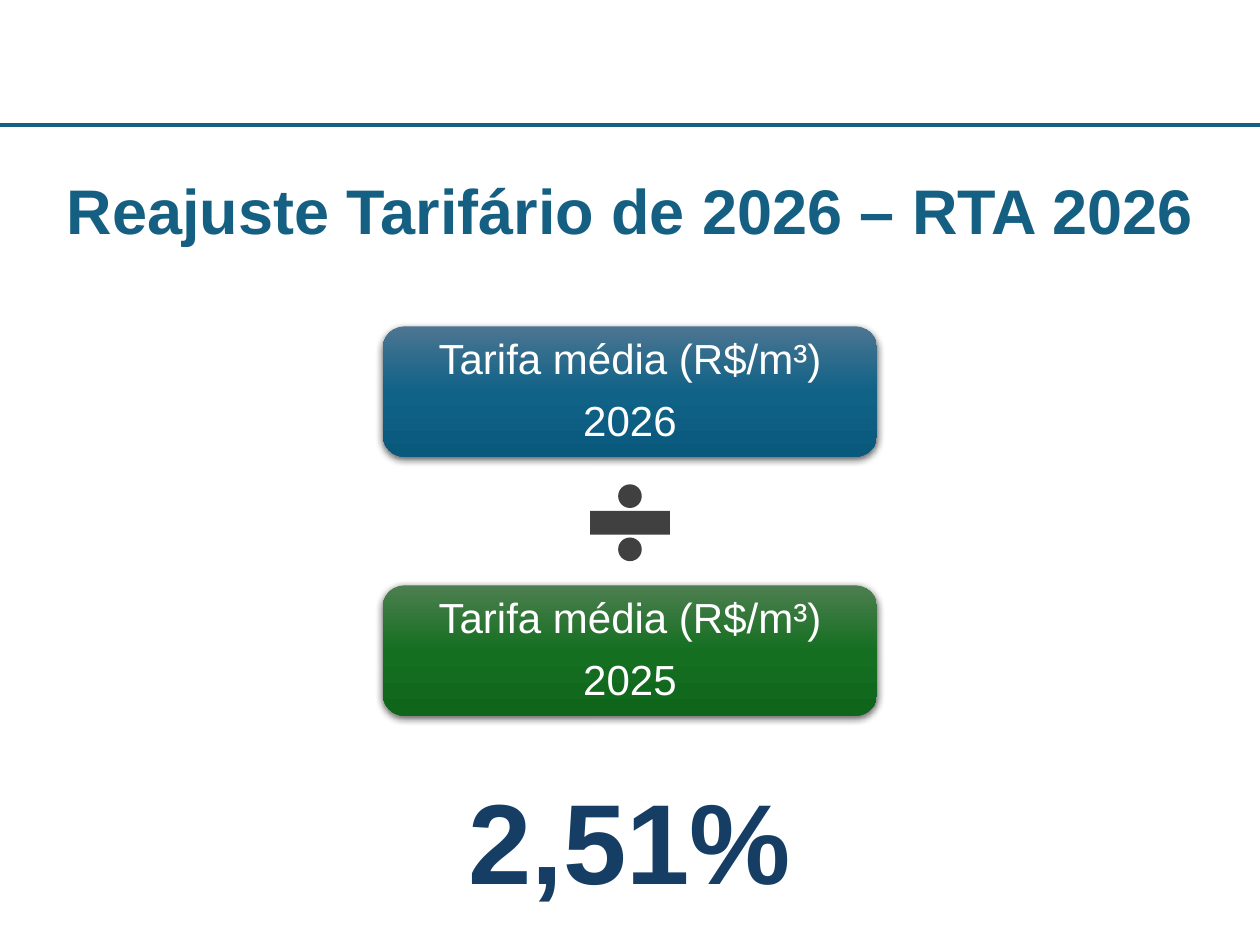
from lxml import etree
from pptx import Presentation
from pptx.dml.color import RGBColor
from pptx.enum.shapes import MSO_CONNECTOR, MSO_SHAPE
from pptx.enum.text import MSO_ANCHOR, MSO_AUTO_SIZE, PP_ALIGN
from pptx.oxml import parse_xml
from pptx.oxml.ns import qn
from pptx.util import Pt

LINE = MSO_CONNECTOR.STRAIGHT
ROUND = MSO_SHAPE.ROUNDED_RECTANGLE
DIVIDE = MSO_SHAPE.MATH_DIVIDE
MIDDLE = MSO_ANCHOR.MIDDLE
TOP = MSO_ANCHOR.TOP
GROW = MSO_AUTO_SIZE.SHAPE_TO_FIT_TEXT
FIXED = MSO_AUTO_SIZE.NONE
CENTER = PP_ALIGN.CENTER

WIDE, HIGH = 720, 540
CARD_W, CARD_H = 282.5, 74.5
NS = 'xmlns:a="http://schemas.openxmlformats.org/drawingml/2006/main"'
HEX = {
    "teal": "156082",
    "navy": "163E64",
    "gray": "404040",
    "white": "FFFFFF",
    "blues": ("4C7591", "106287", "09597D"),
    "greens": ("4D7E50", "156F21", "0F661B"),
}


def color(name):
    return RGBColor.from_string(HEX[name])


def write(shape, text, size, tint, bold=False, line=1.0, after=0, anchor=TOP, fit=FIXED):
    frame = shape.text_frame
    frame.word_wrap = True
    frame.auto_size = fit
    frame.vertical_anchor = anchor
    frame.text = text
    for para in frame.paragraphs:
        para.alignment = CENTER
        para.line_spacing = line
        para.space_before = Pt(0)
        para.space_after = Pt(after)
        font = para.font
        font.name, font.size, font.bold = "Arial", Pt(size), bold
        font.color.rgb = color(tint)


def shade(shape, tones):
    shape.fill.gradient()
    shape.fill.gradient_angle = 270
    stops = shape._element.spPr.find(qn("a:gradFill")).find(qn("a:gsLst"))
    for stop in list(stops):
        stops.remove(stop)
    for spot, tone in enumerate(tones):
        stop = etree.SubElement(stops, qn("a:gs"), pos=str(spot * 50000))
        etree.SubElement(stop, qn("a:srgbClr"), val=tone)


def cast(shape):
    shape._element.spPr.append(parse_xml(
        f'<a:effectLst {NS}><a:outerShdw blurRad="{Pt(4.5)}" dist="{Pt(1.5)}" '
        'dir="5400000" algn="ctr" rotWithShape="0"><a:srgbClr val="000000">'
        '<a:alpha val="63000"/></a:srgbClr></a:outerShdw></a:effectLst>'))


def card(slide, top, year, tones):
    left = (WIDE - CARD_W) / 2
    shape = slide.shapes.add_shape(ROUND, Pt(left), Pt(top), Pt(CARD_W), Pt(CARD_H))
    shape.line.fill.background()
    shade(shape, HEX[tones])
    cast(shape)
    write(shape, f"Tarifa média (R$/m³)\n{year}", 24, "white",
          line=0.9, after=9.5, anchor=MIDDLE)


def rule(slide, top):
    line = slide.shapes.add_connector(LINE, Pt(0), Pt(top), Pt(WIDE), Pt(top))
    line.line.color.rgb = color("teal")
    line.line.width = Pt(2)
    etree.SubElement(line._element.spPr, qn("a:effectLst"))


def divide(slide, top, wide, high):
    sign = slide.shapes.add_shape(DIVIDE, Pt((WIDE - wide) / 2), Pt(top), Pt(wide), Pt(high))
    sign.shadow.inherit = False
    sign.fill.solid()
    sign.fill.fore_color.rgb = color("gray")
    sign.line.fill.background()


def title(slide, text):
    head = slide.shapes.title
    head.left, head.top, head.width, head.height = Pt(30.5), Pt(94.5), Pt(659), Pt(51)
    write(head, text, 36, "teal", bold=True, fit=GROW)


def result(slide, text):
    left = (WIDE - CARD_W) / 2
    box = slide.shapes.add_textbox(Pt(left), Pt(398), Pt(CARD_W), Pt(111))
    write(box, text, 65, "navy", bold=True, line=1.5, fit=GROW)


def main():
    deck = Presentation()
    deck.slide_width, deck.slide_height = Pt(WIDE), Pt(HIGH)
    slide = deck.slides.add_slide(deck.slide_layouts[5])
    rule(slide, 71.5)
    divide(slide, 270, 62, 57.5)
    card(slide, 186.5, "2026", "blues")
    card(slide, 334.5, "2025", "greens")
    title(slide, "Reajuste Tarifário de 2026 – RTA 2026")
    result(slide, "2,51%")
    deck.save("out.pptx")


if __name__ == "__main__":
    main()
